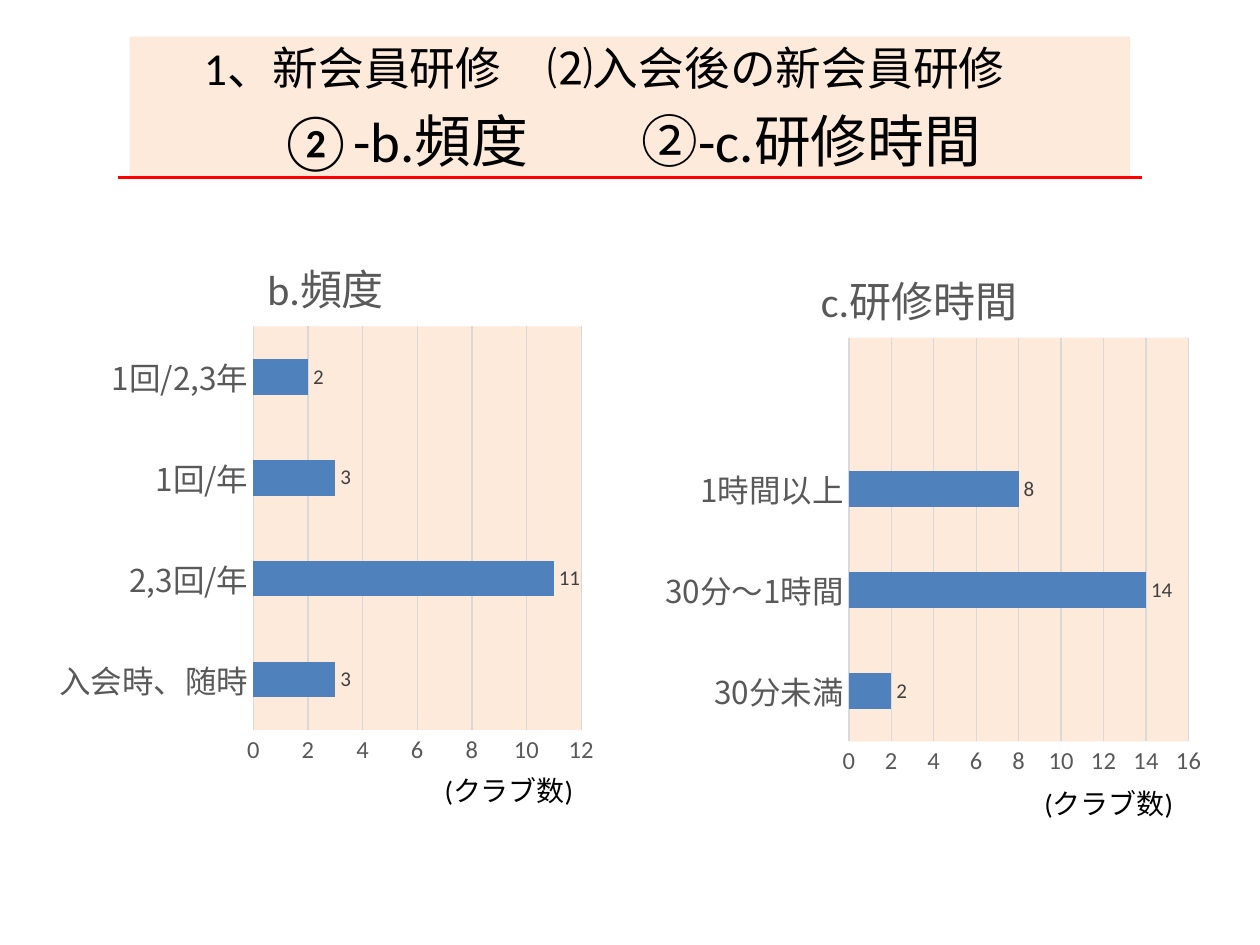
import pptx
import pptx.chart.data
import pptx.dml.color
import pptx.enum.chart
import pptx.enum.shapes
import pptx.enum.text
import pptx.oxml
import pptx.oxml.ns
from lxml import etree
from pptx.util import Inches, Pt

RGBColor = pptx.dml.color.RGBColor
PEACH = RGBColor(0xFD, 0xEA, 0xDA)
RED = RGBColor(0xFF, 0x00, 0x00)
BLUE = RGBColor(0x4F, 0x81, 0xBD)
BLACK = RGBColor(0x00, 0x00, 0x00)
DARK = RGBColor(0x40, 0x40, 0x40)
GRAY = RGBColor(0x59, 0x59, 0x59)
GRID = RGBColor(0xD9, 0xD9, 0xD9)
LATIN, CJK = "Calibri", "Noto Sans CJK JP"

HEADING = [
    ("1、新会員研修　⑵入会後の新会員研修", 26.1, -2.06),
    ("②-b.頻度　　②-c.研修時間", 32.4, -1.47),
]
UNIT = "(クラブ数)"
CHARTS = [
    {
        "title": "b.頻度",
        "data": [("入会時、随時", 3), ("2,3回/年", 11), ("1回/年", 3), ("1回/2,3年", 2)],
        "box": (0.38, 1.8, 4.41, 4.39),
        "plot": (0.37, 0.18, 0.59, 0.73),
        "max": 12,
        "unit_at": (3.43, 6.09),
    },
    {
        "title": "c.研修時間",
        "data": [("30分未満", 2), ("30分～1時間", 14), ("1時間以上", 8), ("", None)],
        "box": (4.97, 1.89, 4.65, 4.39),
        "plot": (0.38, 0.18, 0.58, 0.73),
        "max": 16,
        "unit_at": (8.19, 6.19),
    },
]


def style(font, size, color, name=LATIN):
    font.size, font.name, font.bold = Pt(size), name, False
    font.color.rgb = color


def add_heading(s):
    sp = s.shapes.add_shape(pptx.enum.shapes.MSO_SHAPE.RECTANGLE,
                            Inches(1.03), Inches(0.29), Inches(7.94), Inches(1.11))
    sp.shadow.inherit = False
    sp.fill.solid()
    sp.fill.fore_color.rgb = PEACH
    sp.line.fill.background()
    tf = sp.text_frame
    tf.word_wrap = True
    tf.vertical_anchor = pptx.enum.text.MSO_ANCHOR.MIDDLE
    for i, (text, size, indent) in enumerate(HEADING):
        p = tf.paragraphs[0] if i == 0 else tf.add_paragraph()
        p.text = text
        p.alignment = pptx.enum.text.PP_ALIGN.LEFT
        p.space_before = Pt(round(size * 0.2, 1))
        style(p.font, size, BLACK)
        pPr = p._p.get_or_add_pPr()
        pPr.set("marL", str(Inches(2.55)))
        pPr.set("indent", str(Inches(indent)))

    line = s.shapes.add_connector(pptx.enum.shapes.MSO_CONNECTOR.STRAIGHT,
                                  Inches(0.94), Inches(1.41), Inches(9.06), Inches(1.41))
    line.line.color.rgb = RED
    line.line.width = Pt(1.5)
    etree.SubElement(line._element.spPr, pptx.oxml.ns.qn("a:effectLst"))


def shape_plot_area(chart, plot):
    area = chart._chartSpace.chart.plotArea
    for old in area.findall(pptx.oxml.ns.qn("c:layout")):
        area.remove(old)
    places = "".join(f'<c:{k} val="{v}"/>' for k, v in zip("xywh", plot))
    area.insert(0, pptx.oxml.parse_xml(
        f'<c:layout {pptx.oxml.ns.nsdecls("c")}><c:manualLayout>'
        '<c:layoutTarget val="inner"/><c:xMode val="edge"/><c:yMode val="edge"/>'
        f'{places}</c:manualLayout></c:layout>'))
    area.append(pptx.oxml.parse_xml(
        f'<c:spPr {pptx.oxml.ns.nsdecls("c", "a")}><a:solidFill>'
        f'<a:srgbClr val="{PEACH}"/></a:solidFill></c:spPr>'))


def add_bar_chart(s, item):
    names, values = zip(*item["data"])
    data = pptx.chart.data.CategoryChartData()
    data.categories = names
    data.add_series("Series 1", values)
    chart = s.shapes.add_chart(pptx.enum.chart.XL_CHART_TYPE.BAR_CLUSTERED,
                               *map(Inches, item["box"]), data).chart
    style(chart.font, 10, BLACK)
    chart.has_legend = False
    chart.has_title = True
    tf = chart.chart_title.text_frame
    tf.text = item["title"]
    style(tf.paragraphs[0].font, 24, GRAY)
    chart.chart_title.include_in_layout = False

    cat, val = chart.category_axis, chart.value_axis
    for axis in (cat, val):
        axis.major_tick_mark = axis.minor_tick_mark = pptx.enum.chart.XL_TICK_MARK.NONE
    style(cat.tick_labels.font, 18, GRAY, CJK)
    style(val.tick_labels.font, 14, GRAY)
    val.minimum_scale, val.maximum_scale, val.major_unit = 0, item["max"], 2
    val.format.line.fill.background()
    val.has_major_gridlines = True
    for line in (cat.format.line, val.major_gridlines.format.line):
        line.color.rgb = GRID
        line.width = Pt(0.75)

    plot = chart.plots[0]
    plot.gap_width = 182
    plot.vary_by_categories = False
    fill = plot.series[0].format.fill
    fill.solid()
    fill.fore_color.rgb = BLUE
    plot.has_data_labels = True
    labels = plot.data_labels
    labels.show_value = True
    labels.position = pptx.enum.chart.XL_LABEL_POSITION.OUTSIDE_END
    style(labels.font, 12, DARK)
    shape_plot_area(chart, item["plot"])


def add_unit(s, at):
    tf = s.shapes.add_textbox(*map(Inches, (*at, 1.73, 0.37))).text_frame
    tf.word_wrap = True
    tf.auto_size = pptx.enum.text.MSO_AUTO_SIZE.SHAPE_TO_FIT_TEXT
    p = tf.paragraphs[0]
    p.text = UNIT
    style(p.font, 16, BLACK)


def main():
    prs = pptx.Presentation()
    prs.slide_width, prs.slide_height = Inches(10), Inches(7.5)
    s = prs.slides.add_slide(prs.slide_layouts[6])
    add_heading(s)
    for item in CHARTS:
        add_bar_chart(s, item)
        add_unit(s, item["unit_at"])
    prs.save("out.pptx")


if __name__ == "__main__":
    main()
